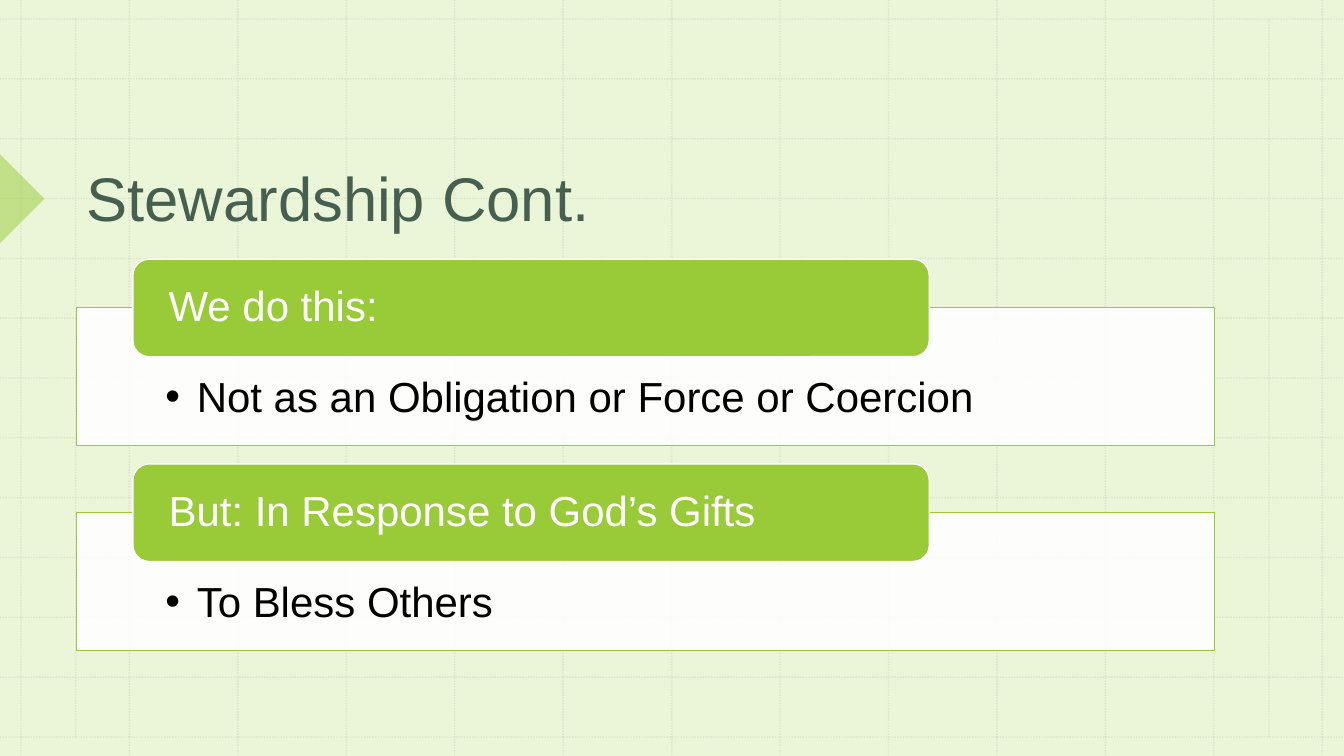
from dataclasses import dataclass

import lxml.etree
import pptx
import pptx.dml.color
import pptx.enum.dml
import pptx.enum.shapes
import pptx.enum.text
import pptx.oxml.ns
import pptx.util
from pptx.util import Cm

RGB = pptx.dml.color.RGBColor
PALE_GREEN = RGB(0xEB, 0xF5, 0xD7)
GREEN = RGB(0x99, 0xCB, 0x38)
DARK_GREEN = RGB(0x45, 0x5F, 0x51)
GRID_GREY = RGB(0xBC, 0xBC, 0xBC)
WHITE = RGB(0xFF, 0xFF, 0xFF)
BLACK = RGB(0x00, 0x00, 0x00)

FONT = "Arial"
WIDTH, HEIGHT = 33.87, 19.05  # slide size in cm
CELLS = 12
GRID_LEFT, GRID_RIGHT = 0.53, 33.32
GRID_TOP, GRID_BOTTOM = 0.48, 18.57
CARD_TOP, CARD_PITCH = 7.75, 5.16

SHAPE = pptx.enum.shapes.MSO_SHAPE
ANCHOR = pptx.enum.text.MSO_ANCHOR
qn = pptx.oxml.ns.qn


@dataclass
class Card:
    heading: str
    point: str


CARDS = [
    Card("We do this:", "Not as an Obligation or Force or Coercion"),
    Card("But: In Response to God’s Gifts", "To Bless Others"),
]


def set_alpha(sp, percent: int) -> None:
    """Make the first colour of the shape (its fill, or a connector's line) see-through."""
    color = next(sp._element.spPr.iter(qn("a:srgbClr")))
    lxml.etree.SubElement(color, qn("a:alpha"), val=str(percent * 1000))


def place(sp, left: float, top: float, width: float, height: float) -> None:
    sp.left, sp.top, sp.width, sp.height = Cm(left), Cm(top), Cm(width), Cm(height)


def bring_to_front(sp) -> None:
    sp._element.getparent().append(sp._element)


def paint(sp, fill: RGB, line: RGB) -> None:
    sp.fill.solid()
    sp.fill.fore_color.rgb = fill
    sp.line.color.rgb = line
    sp.line.width = pptx.util.Pt(1)


def write(sp, text: str, size: int, color: RGB, anchor, insets=(0.25, 0.13, 0.25, 0.13)):
    """Write one left-aligned run and return its paragraph."""
    tf = sp.text_frame
    tf.word_wrap = True
    tf.auto_size = pptx.enum.text.MSO_AUTO_SIZE.NONE
    tf.vertical_anchor = anchor
    tf.margin_left, tf.margin_top, tf.margin_right, tf.margin_bottom = map(Cm, insets)
    p = tf.paragraphs[0]
    p.alignment = pptx.enum.text.PP_ALIGN.LEFT
    p.space_before = pptx.util.Pt(0)
    r = p.add_run()
    r.text = text
    r.font.name, r.font.size = FONT, pptx.util.Pt(size)
    r.font.color.rgb = color
    return p


def add_grid_line(s, x1: float, y1: float, x2: float, y2: float) -> None:
    line = s.shapes.add_connector(
        pptx.enum.shapes.MSO_CONNECTOR.STRAIGHT, Cm(x1), Cm(y1), Cm(x2), Cm(y2))
    line.line.color.rgb = GRID_GREY
    line.line.width = pptx.util.Pt(1)
    line.line.dash_style = pptx.enum.dml.MSO_LINE.ROUND_DOT
    set_alpha(line, 30)
    lxml.etree.SubElement(line._element.spPr, qn("a:effectLst"))


def add_grid(s) -> None:
    for i in range(CELLS + 1):
        x = GRID_LEFT + i * (GRID_RIGHT - GRID_LEFT) / CELLS
        y = GRID_TOP + i * (GRID_BOTTOM - GRID_TOP) / CELLS
        add_grid_line(s, x, 0, x, HEIGHT)
        add_grid_line(s, 0, y, WIDTH, y)
    for x in (1.91, 31.98):
        add_grid_line(s, x, GRID_TOP, x, GRID_BOTTOM)


def add_marker(s) -> None:
    sp = s.shapes.add_shape(SHAPE.RIGHT_TRIANGLE, Cm(-0.79), Cm(4.22), Cm(1.58), Cm(1.58))
    sp.rotation = 225
    sp.shadow.inherit = False
    sp.fill.solid()
    sp.fill.fore_color.rgb = GREEN
    sp.line.fill.background()
    set_alpha(sp, 50)


def add_card(s, body, card: Card, top: float) -> None:
    # White panel with its bullet
    place(body, 1.93, top, 28.68, 3.48)
    paint(body, WHITE, GREEN)
    set_alpha(body, 90)
    p = write(body, card.point, 30, BLACK, ANCHOR.TOP, (2.24, 1.73, 2.24, 0.58))
    p.line_spacing = 0.9
    pPr = p._p.get_or_add_pPr()
    pPr.set("marL", str(Cm(0.79)))
    pPr.set("indent", str(Cm(-0.79)))
    lxml.etree.SubElement(pPr, qn("a:buChar"), char="•")
    bring_to_front(body)

    # Green heading overlapping the panel
    sp = s.shapes.add_shape(SHAPE.ROUNDED_RECTANGLE, Cm(3.35), Cm(top - 1.22), Cm(20.07), Cm(2.46))
    sp.shadow.inherit = False
    paint(sp, GREEN, WHITE)
    p = write(sp, card.heading, 30, WHITE, ANCHOR.MIDDLE, (0.78, 0, 0.78, 0))
    p.line_spacing = 0.9


def main() -> None:
    prs = pptx.Presentation()
    prs.slide_width, prs.slide_height = Cm(WIDTH), Cm(HEIGHT)
    s = prs.slides.add_slide(prs.slide_layouts.get_by_name("Two Content"))
    s.background.fill.solid()
    s.background.fill.fore_color.rgb = PALE_GREEN
    title, *bodies = list(s.placeholders)

    # Backdrop
    add_grid(s)
    add_marker(s)

    # Title
    place(title, 1.93, 2.01, 28.68, 4.01)
    write(title, "Stewardship Cont.", 44, DARK_GREEN, ANCHOR.BOTTOM)
    bring_to_front(title)

    # Cards
    for i, (body, card) in enumerate(zip(bodies, CARDS)):
        add_card(s, body, card, CARD_TOP + i * CARD_PITCH)

    prs.save("out.pptx")


if __name__ == "__main__":
    main()
